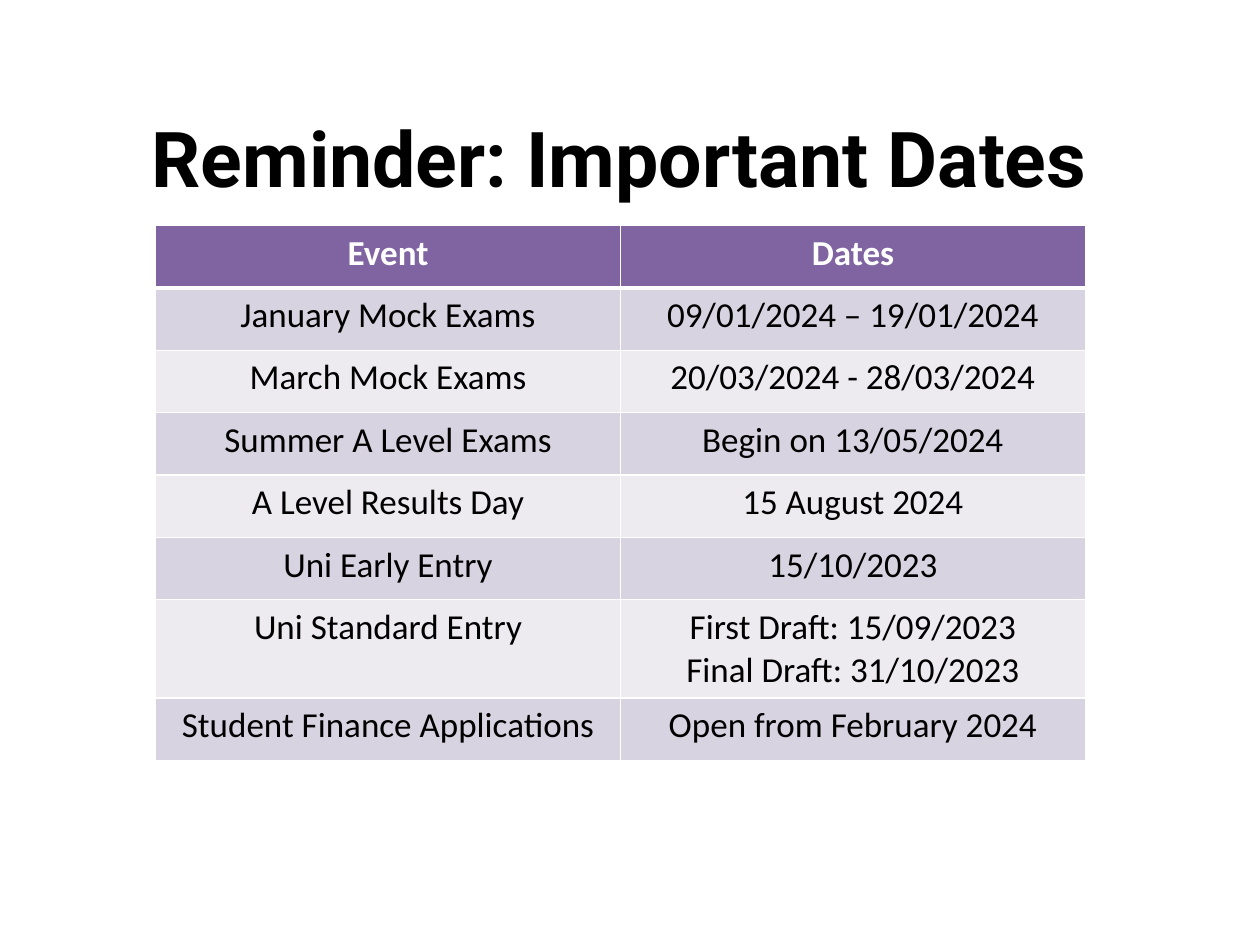
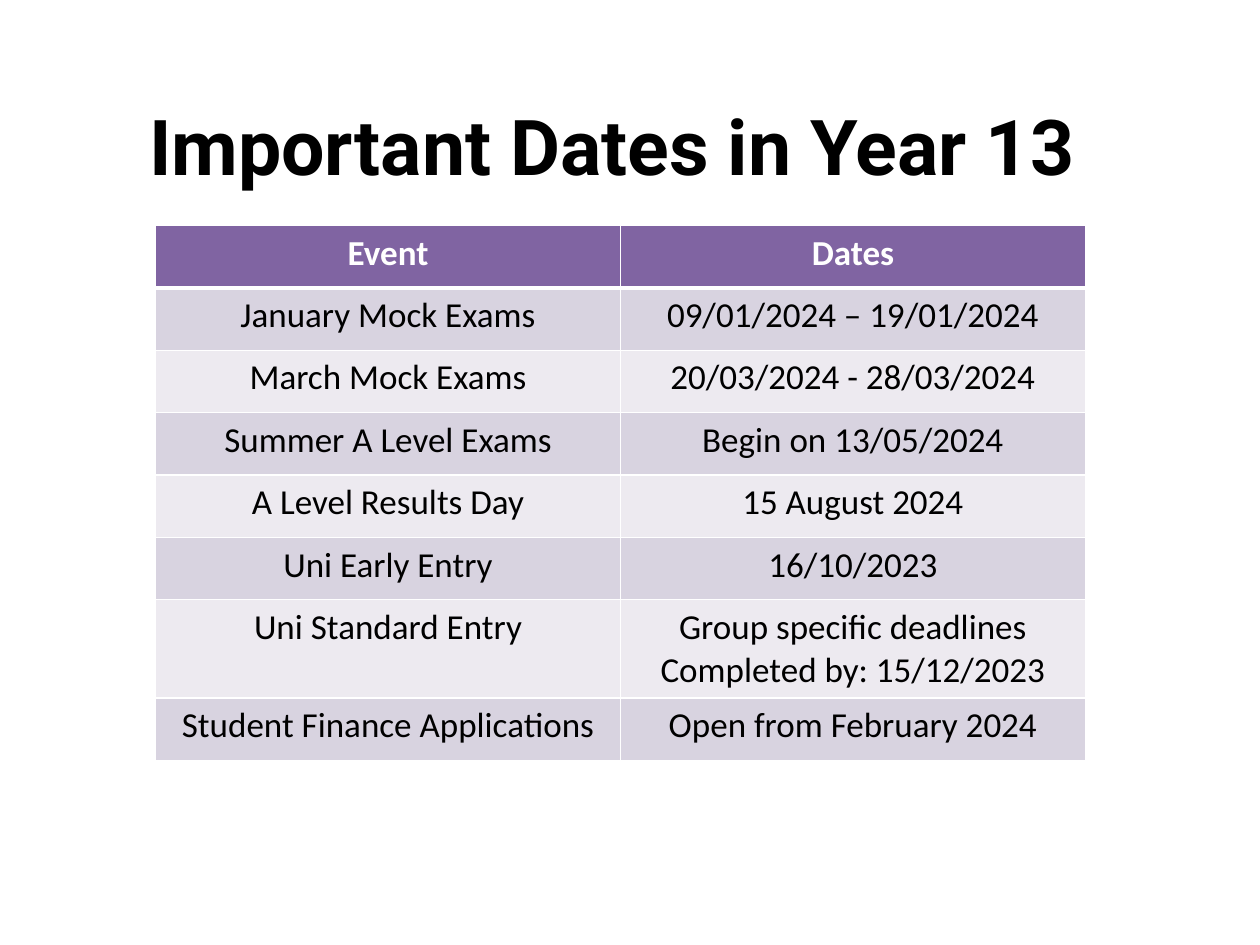
from lxml import etree
from pptx import Presentation
from pptx.dml.color import RGBColor
from pptx.enum.text import MSO_ANCHOR, MSO_AUTO_SIZE, PP_ALIGN
from pptx.oxml.ns import qn
from pptx.util import Pt

PX = 4572
MIDDLE = MSO_ANCHOR.MIDDLE
NO_AUTOFIT = MSO_AUTO_SIZE.NONE
CENTER = PP_ALIGN.CENTER

WHITE = RGBColor(0xFF, 0xFF, 0xFF)
BLACK = RGBColor(0x00, 0x00, 0x00)
PURPLE = RGBColor(0x80, 0x64, 0xA2)
LILAC = RGBColor(0xD8, 0xD3, 0xE0)
PALE_LILAC = RGBColor(0xED, 0xEA, 0xF0)

TITLE_FONT = {"name": "Roboto", "size": Pt(44), "bold": True}
HEADER_FONT = {"name": "Calibri", "size": Pt(20), "bold": True}
BODY_FONT = {"name": "Calibri", "size": Pt(20), "bold": False}

TITLE_ONLY_LAYOUT = 5
TABLE_LEFT, TABLE_TOP = 247, 358
COLUMN_WIDTH, ROW_HEIGHT, TWO_LINE_HEIGHT = 738, 99, 156


def px(*lengths):
    """Turn pixel lengths into EMU."""
    return [length * PX for length in lengths]


def write_text(frame, text, font_format, color):
    """Write centred text, one paragraph for each line."""
    frame.text = text
    for para in frame.paragraphs:
        para.alignment = CENTER
        for span in para.runs:
            for name, value in font_format.items():
                setattr(span.font, name, value)
            span.font.color.rgb = color


def add_title(page, text, place):
    """Place and format the slide title."""
    title = page.shapes.title
    title.left, title.top, title.width, title.height = px(*place)
    frame = title.text_frame
    write_text(frame, text, TITLE_FONT, BLACK)
    frame_format = {"word_wrap": True, "auto_size": NO_AUTOFIT, "vertical_anchor": MIDDLE}
    for name, value in frame_format.items():
        setattr(frame, name, value)


def set_borders(cell, top, bottom):
    """Draw white cell borders, with top and bottom widths in points."""
    properties = cell._tc.get_or_add_tcPr()
    widths = {"a:lnL": 1, "a:lnR": 1, "a:lnT": top, "a:lnB": bottom}
    for position, (tag, width) in enumerate(widths.items()):
        line = etree.Element(qn(tag), w=str(Pt(width)))
        fill = etree.SubElement(line, qn("a:solidFill"))
        etree.SubElement(fill, qn("a:srgbClr"), val=str(WHITE))
        properties.insert(position, line)


def add_dates_table(page, rows):
    """Add the banded table of events and dates."""
    heights = [TWO_LINE_HEIGHT if "\n" in dates else ROW_HEIGHT for _, dates in rows]
    place = px(TABLE_LEFT, TABLE_TOP, 2 * COLUMN_WIDTH, sum(heights))
    table = page.shapes.add_table(len(rows), 2, *place).table
    for row_index, row in enumerate(rows):
        table.rows[row_index].height = heights[row_index] * PX
        is_header = row_index == 0
        band = LILAC if row_index % 2 else PALE_LILAC
        for column_index, text in enumerate(row):
            cell = table.cell(row_index, column_index)
            cell.fill.solid()
            cell.fill.fore_color.rgb = PURPLE if is_header else band
            set_borders(cell, 3 if row_index == 1 else 1, 3 if is_header else 1)
            write_text(cell.text_frame, text,
                       HEADER_FONT if is_header else BODY_FONT,
                       WHITE if is_header else BLACK)


def add_dates_page(deck, title, title_place, early_entry, standard_entry):
    """Add a page of important dates with its own entry deadlines."""
    page = deck.slides.add_slide(deck.slide_layouts[TITLE_ONLY_LAYOUT])
    add_title(page, title, title_place)
    add_dates_table(page, [
        ("Event", "Dates"),
        ("January Mock Exams", "09/01/2024 – 19/01/2024"),
        ("March Mock Exams", "20/03/2024 - 28/03/2024"),
        ("Summer A Level Exams", "Begin on 13/05/2024"),
        ("A Level Results Day", "15 August 2024"),
        ("Uni Early Entry", early_entry),
        ("Uni Standard Entry", standard_entry),
        ("Student Finance Applications", "Open from February 2024"),
    ])


def main():
    """Build and save the deck."""
    deck = Presentation()
    deck.slide_width, deck.slide_height = px(2000, 1500)
    add_dates_page(deck, "Reminder: Important Dates", (212, 170, 1544, 158),
                   "15/10/2023", "First Draft: 15/09/2023\nFinal Draft: 31/10/2023")
    add_dates_page(deck, "Important Dates in Year 13", (138, 150, 1668, 158),
                   "16/10/2023", "Group specific deadlines\nCompleted by: 15/12/2023")
    deck.save("out.pptx")


if __name__ == "__main__":
    main()
